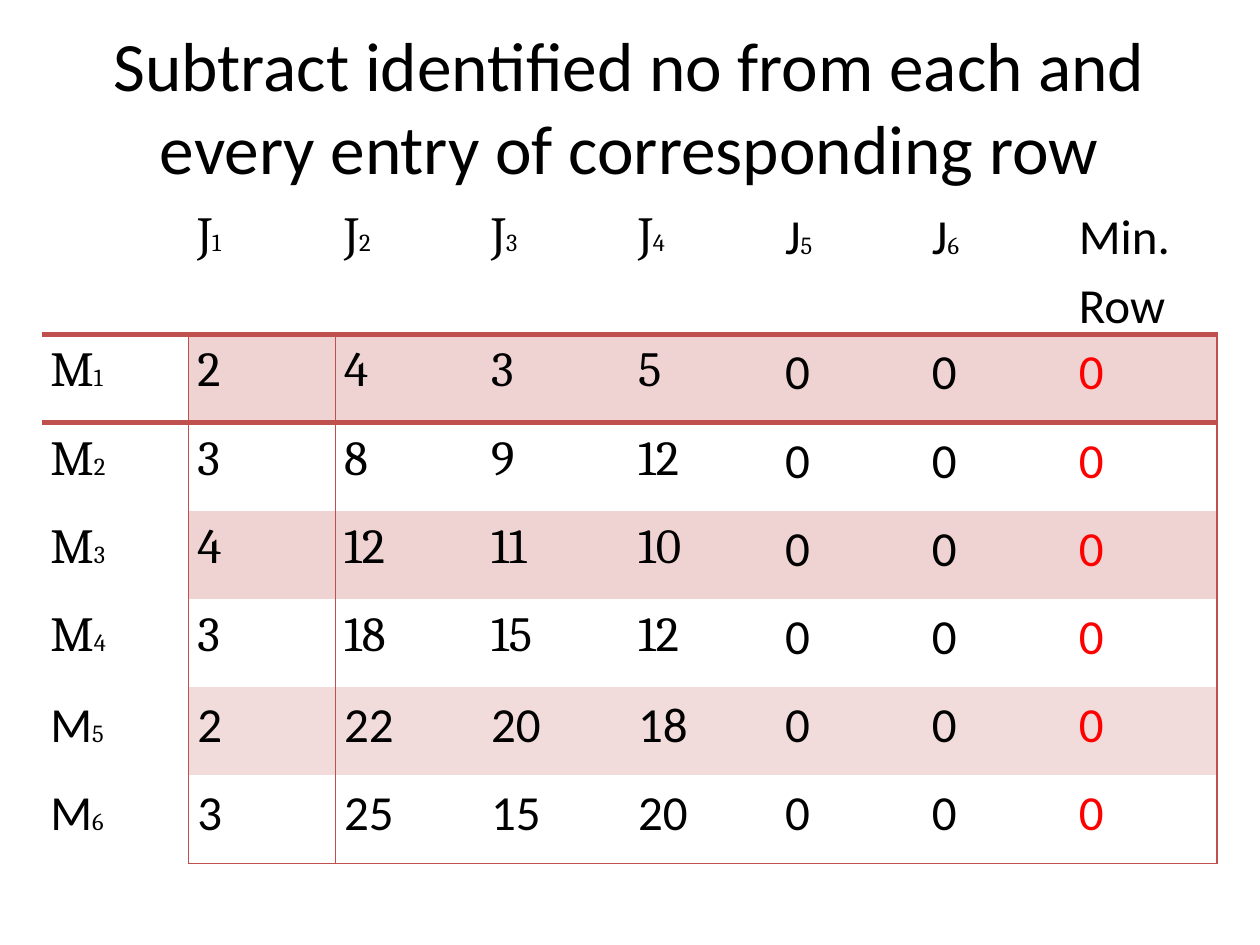
from lxml.etree import SubElement
from pptx import Presentation
from pptx.dml.color import RGBColor
from pptx.enum.text import MSO_ANCHOR, PP_ALIGN
from pptx.oxml.ns import qn
from pptx.util import Inches, Pt

COLORS = {
    "text": "000000",
    "minimum": "FF0000",
    "rule": "C0504D",
    "plain": "FFFFFF",
    "band": "EFD3D2",
    "light_band": "F2DCDB",
}
NO_STYLE = "{2D5ABB26-0587-4C30-8999-92F81FD0307C}"
TITLE = "Subtract identified no from each and every entry of corresponding row"
TIMES = [
    [2, 4, 3, 5],
    [3, 8, 9, 12],
    [4, 12, 11, 10],
    [3, 18, 15, 12],
    [2, 22, 20, 18],
    [3, 25, 15, 20],
]
JOBS = 6
LAST_COL = JOBS + 1
LAST_ROW = len(TIMES)
ROW_FILLS = {1: "band", 3: "band", 5: "light_band"}


def add_run(paragraph, text, size, font, color="text"):
    run = paragraph.add_run()
    run.text = str(text)
    run.font.size = Pt(size)
    run.font.name = font
    run.font.bold = False
    run.font.color.rgb = RGBColor.from_string(COLORS[color])


def cell_runs(row, col):
    font = "Cambria" if row < 5 and col < 5 else "Calibri"
    if row == col == 0:
        return []
    if row == 0 and col == LAST_COL:
        return [("Min. Row", 28, font)]
    if row == 0:
        return [("J", 28, font), (col, 14, "Cambria")]
    if col == 0:
        return [("M", 28, font), (row, 14, "Cambria")]
    times = TIMES[row - 1]
    value = times[col - 1] if col <= len(times) else 0
    return [(value, 28, font, "minimum" if col == LAST_COL else "text")]


def cell_borders(row, col):
    borders = {}
    if row > 0 and col == 1:
        borders["L"] = 1
    if row > 0 and col in (0, LAST_COL):
        borders["R"] = 1
    if row == 1:
        borders["T"] = 3
    if row == 0:
        borders["B"] = 3
    if row == LAST_ROW and col > 0:
        borders["B"] = 1
    return borders


def draw_borders(cell, borders):
    properties = cell._tc.get_or_add_tcPr()
    for side, width in borders.items():
        line = SubElement(properties, qn(f"a:ln{side}"), w=str(Pt(width)))
        fill = SubElement(line, qn("a:solidFill"))
        SubElement(fill, qn("a:srgbClr"), val=COLORS["rule"])


def add_title(slide, left, top, width, height):
    frame = slide.shapes.add_textbox(left, top, width, height).text_frame
    frame.word_wrap = True
    frame.vertical_anchor = MSO_ANCHOR.MIDDLE
    paragraph = frame.paragraphs[0]
    paragraph.alignment = PP_ALIGN.CENTER
    add_run(paragraph, TITLE, 39.6, "Calibri")


def fill_cell(cell, row, col):
    cell.margin_left = cell.margin_right = Inches(0.07)
    cell.margin_top = cell.margin_bottom = Inches(0)
    draw_borders(cell, cell_borders(row, col))
    cell.fill.solid()
    fill = ROW_FILLS.get(row, "plain") if col > 0 else "plain"
    cell.fill.fore_color.rgb = RGBColor.from_string(COLORS[fill])
    paragraph = cell.text_frame.paragraphs[0]
    paragraph.line_spacing = 1.15
    for run in cell_runs(row, col):
        add_run(paragraph, *run)


def add_matrix(slide, left, top, width, row_height):
    rows, cols = LAST_ROW + 1, LAST_COL + 1
    frame = slide.shapes.add_table(rows, cols, left, top, width, row_height * rows)
    matrix = frame.table
    matrix.first_row = matrix.horz_banding = False
    matrix._tbl.tblPr.find(qn("a:tableStyleId")).text = NO_STYLE
    for row in range(rows):
        matrix.rows[row].height = row_height
        for col in range(cols):
            fill_cell(matrix.cell(row, col), row, col)


def main():
    deck = Presentation()
    deck.slide_width, deck.slide_height = Inches(10), Inches(7.5)
    slide = deck.slides.add_slide(deck.slide_layouts[6])
    add_title(slide, Inches(0.33), Inches(0.42), Inches(9.33), Inches(0.83))
    add_matrix(slide, Inches(0.33), Inches(1.58), Inches(9.33), Inches(0.7))
    deck.save("out.pptx")


if __name__ == "__main__":
    main()
